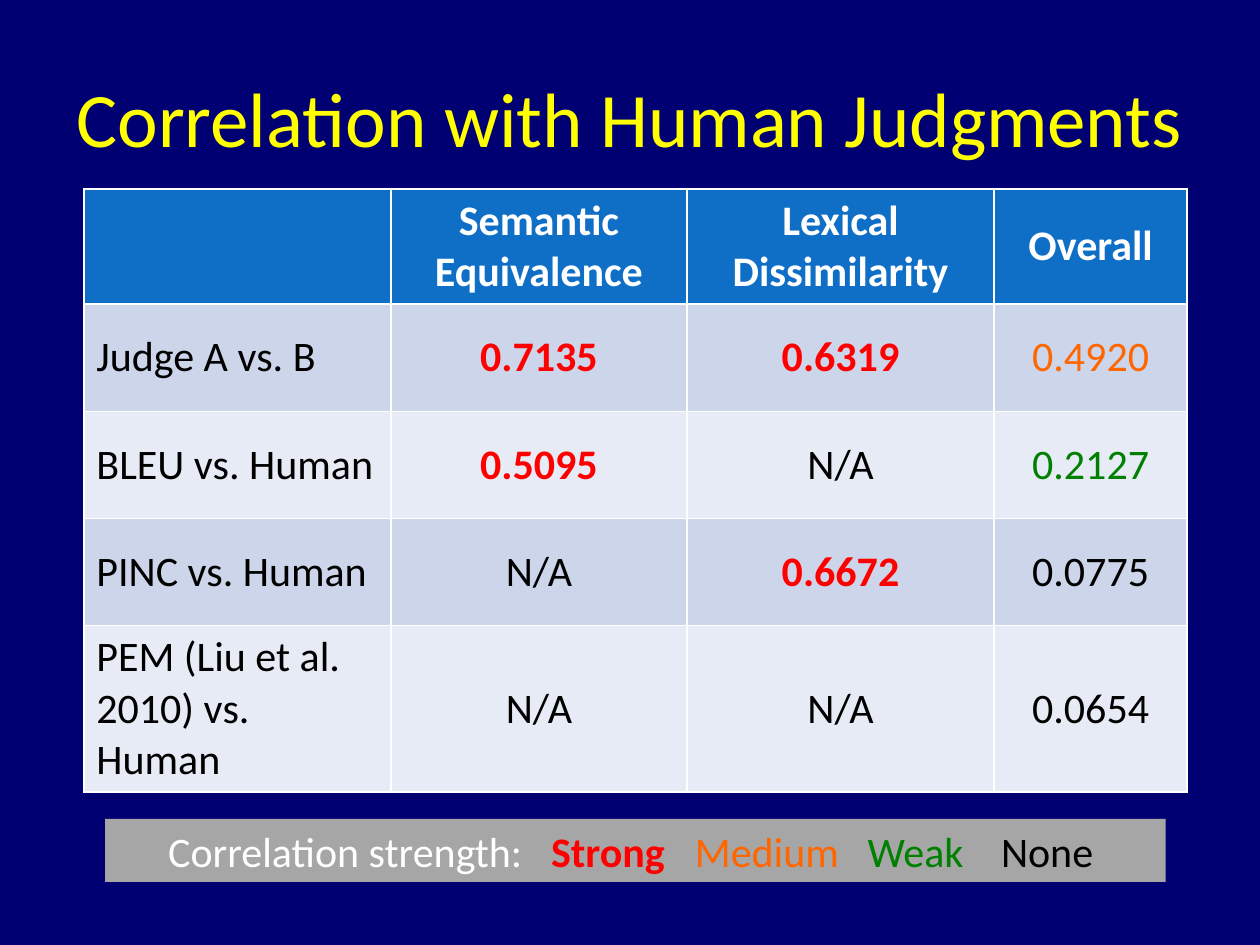
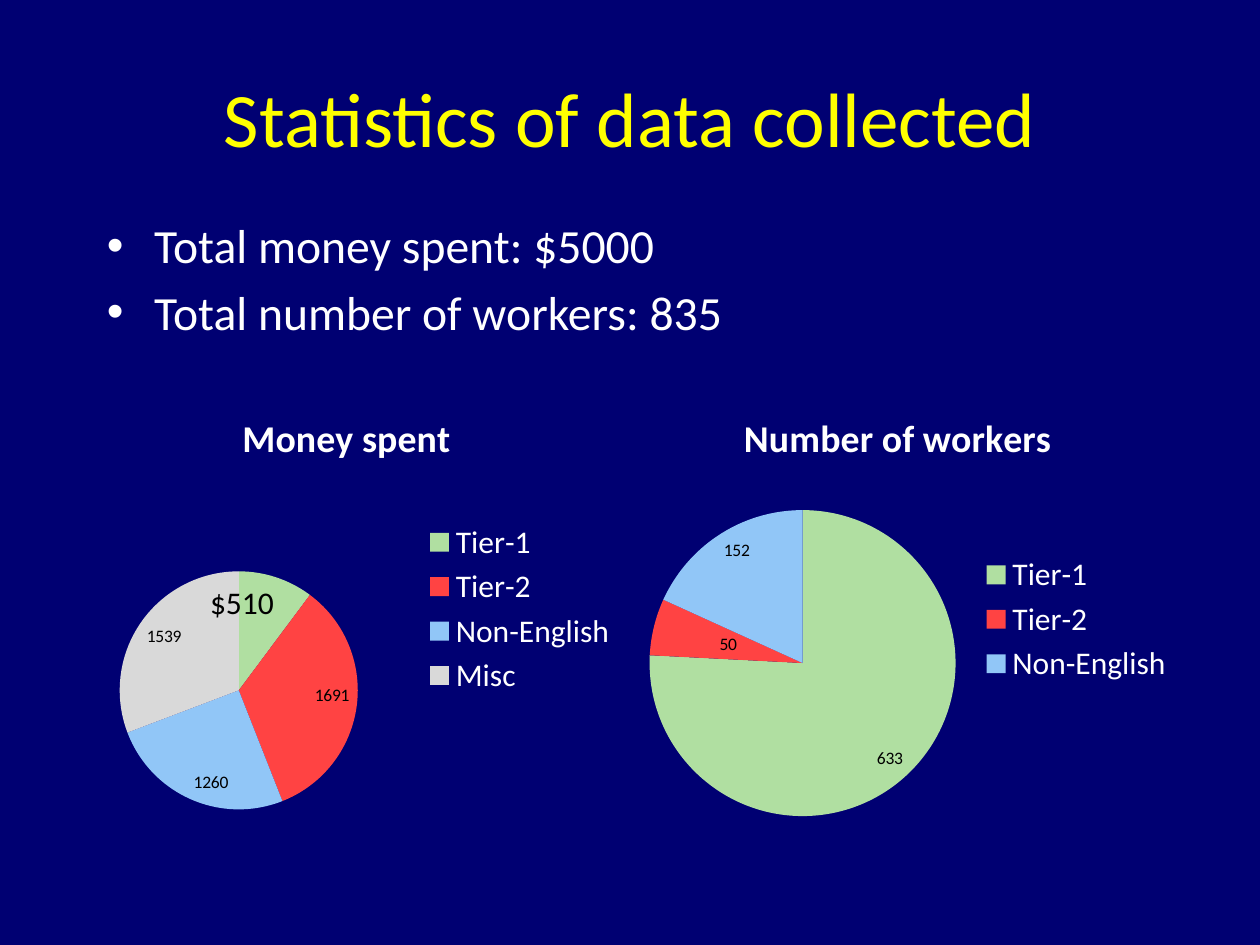
from lxml import etree
from pptx import Presentation
from pptx.chart.data import CategoryChartData
from pptx.dml.color import RGBColor
from pptx.enum.chart import XL_CHART_TYPE, XL_LABEL_POSITION, XL_LEGEND_POSITION
from pptx.enum.shapes import MSO_SHAPE
from pptx.enum.text import MSO_ANCHOR, MSO_AUTO_SIZE, PP_ALIGN
from pptx.oxml.ns import qn
from pptx.util import Cm, Pt

PIE = XL_CHART_TYPE.PIE
INSIDE_END, CENTER_LABEL = XL_LABEL_POSITION.INSIDE_END, XL_LABEL_POSITION.CENTER
LEGEND_RIGHT = XL_LEGEND_POSITION.RIGHT
RECT = MSO_SHAPE.RECTANGLE
MIDDLE = MSO_ANCHOR.MIDDLE
NO_AUTOFIT = MSO_AUTO_SIZE.NONE
LEFT, CENTER = PP_ALIGN.LEFT, PP_ALIGN.CENTER

FONT = "Calibri"
NAVY, YELLOW, WHITE, BLACK = "000072", "FFFF00", "FFFFFF", "000000"
HEADER_BLUE, BAND_DARK, BAND_LIGHT, GRAY = "0F6FC6", "CCD5EA", "E7EBF5", "A6A6A6"
STRONG, MEDIUM, WEAK = "FF0000", "FF6600", "008000"
SLICE_COLORS = ["B0DFA1", "FF4343", "91C6F7", "D9D9D9"]

rgb = RGBColor.from_string


def style(font, size, color, bold=False):
    font.name, font.size, font.bold = FONT, Pt(size), bold
    font.color.rgb = rgb(color)


def write(p, text, size=24, color=BLACK, bold=False, align=LEFT):
    """Append a formatted run to a paragraph."""
    p.alignment = align
    r = p.add_run()
    r.text = text
    style(r.font, size, color, bold)


prs = Presentation()
prs.slide_width, prs.slide_height = Cm(25.4), Cm(19.05)
bg = prs.slide_master.background.fill
bg.solid()
bg.fore_color.rgb = rgb(NAVY)

# Slides with their titles
slides = []
for layout, title in [(5, "Correlation with Human Judgments"),
                      (1, "Statistics of data collected")]:
    slide = prs.slides.add_slide(prs.slide_layouts[layout])
    sp = slide.shapes.title
    sp.left, sp.top, sp.width, sp.height = Cm(1.27), Cm(0.76), Cm(22.86), Cm(3.18)
    tf = sp.text_frame
    tf.auto_size, tf.vertical_anchor = NO_AUTOFIT, MIDDLE
    write(tf.paragraphs[0], title, 44, YELLOW, align=CENTER)
    slides.append(slide)
correlation, statistics = slides

# Correlation table
rows = [
    ["", "Semantic\nEquivalence", "Lexical Dissimilarity", "Overall"],
    ["Judge A vs. B", "0.7135", "0.6319", "0.4920"],
    ["BLEU vs. Human", "0.5095", "N/A", "0.2127"],
    ["PINC vs. Human", "N/A", "0.6672", "0.0775"],
    ["PEM (Liu et al. 2010) vs. Human", "N/A", "N/A", "0.0654"],
]
value_colors = {"0.7135": STRONG, "0.6319": STRONG, "0.5095": STRONG,
                "0.6672": STRONG, "0.4920": MEDIUM, "0.2127": WEAK}
table = correlation.shapes.add_table(
    5, 4, Cm(1.69), Cm(3.81), Cm(22.24), Cm(10.8)).table
for column, width in zip(table.columns, [6.19, 5.97, 6.19, 3.89]):
    column.width = Cm(width)
for i, row in enumerate(rows):
    table.rows[i].height = Cm(2.16)
    for j, text in enumerate(row):
        cell = table.cell(i, j)
        cell.vertical_anchor = MIDDLE
        cell.fill.solid()
        band = BAND_DARK if i % 2 else BAND_LIGHT
        cell.fill.fore_color.rgb = rgb(band if i else HEADER_BLUE)
        color = value_colors.get(text, BLACK) if i else WHITE
        tf = cell.text_frame
        for n, line in enumerate(text.split("\n")):
            p = tf.add_paragraph() if n else tf.paragraphs[0]
            write(p, line, color=color, bold=color == STRONG or i == 0,
                  align=CENTER if j else LEFT)

# Key to the correlation strengths, spaced by tab stops
sp = correlation.shapes.add_shape(RECT, Cm(2.12), Cm(16.51), Cm(21.38), Cm(1.27))
sp.shadow.inherit = False
sp.fill.solid()
sp.fill.fore_color.rgb = rgb(GRAY)
sp.line.fill.background()
tf = sp.text_frame
tf.margin_left = Cm(1.27)
p = tf.paragraphs[0]
write(p, "Correlation strength:", color=WHITE)
tabs = etree.SubElement(p._p.get_or_add_pPr(), qn("a:tabLst"))
for label, color, stop in [("Strong", STRONG, 7.72), ("Medium", MEDIUM, 10.62),
                           ("Weak", WEAK, 14.1), ("None", BLACK, 16.79)]:
    etree.SubElement(tabs, qn("a:tab"), pos=str(Cm(stop)), algn="l")
    write(p, "\t" + label, color=color, bold=color == STRONG)

# Totals
sp = statistics.placeholders[1]
sp.left, sp.top, sp.width, sp.height = Cm(1.9), Cm(4.23), Cm(22.23), Cm(2.54)
tf = sp.text_frame
tf.auto_size = NO_AUTOFIT
for n, line in enumerate(["Total money spent: $5000", "Total number of workers: 835"]):
    p = tf.add_paragraph() if n else tf.paragraphs[0]
    write(p, line, 27.2, WHITE)

# Pie charts: title, values, frame in cm, plot area as fractions of the frame
pies = [
    ("Number of workers", [633, 50, 152],
     (12.28, 7.83, 11.64, 9.31), (0.07, 0.26, 0.53, 0.67)),
    ("Money spent", [510, 1691, 1260, 1539],
     (1.27, 7.83, 11.43, 8.89), (0.1, 0.41, 0.42, 0.55)),
]
charts = []
for title, values, frame, plot_area in pies:
    data = CategoryChartData()
    data.categories = ["Tier-1", "Tier-2", "Non-English", "Misc"][:len(values)]
    data.add_series("Series 1", values)
    chart = statistics.shapes.add_chart(PIE, *map(Cm, frame), data).chart
    style(chart.font, 18, BLACK)
    chart.has_title = True
    write(chart.chart_title.text_frame.paragraphs[0], title, 21.6, WHITE, True, CENTER)
    chart.has_legend = True
    chart.legend.position = LEGEND_RIGHT
    chart.legend.include_in_layout = False
    style(chart.legend.font, 18, WHITE)

    plot = chart.plots[0]
    plot.vary_by_categories = True
    series = plot.series[0]
    for n in range(len(values)):
        fill = series.points[n].format.fill
        fill.solid()
        fill.fore_color.rgb = rgb(SLICE_COLORS[n])
    labels = series.data_labels
    labels.show_value = True
    labels.position = INSIDE_END
    labels.font.size = Pt(10)

    area = chart._chartSpace.chart.plotArea
    for old in area.findall(qn("c:layout")):
        area.remove(old)
    layout = etree.Element(qn("c:layout"))
    area.insert(0, layout)
    manual = etree.SubElement(layout, qn("c:manualLayout"))
    settings = [("layoutTarget", "inner"), ("xMode", "edge"), ("yMode", "edge")]
    for tag, val in settings + list(zip("xywh", plot_area)):
        etree.SubElement(manual, qn("c:" + tag), val=str(val))
    charts.append(chart)

workers, money = [chart.plots[0].series[0] for chart in charts]
label = workers.points[1].data_label
label.position = CENTER_LABEL
label.font.size = Pt(10)
label = money.points[0].data_label
write(label.text_frame.paragraphs[0], "$510", 18, align=CENTER)
label.position = INSIDE_END

prs.save("out.pptx")
